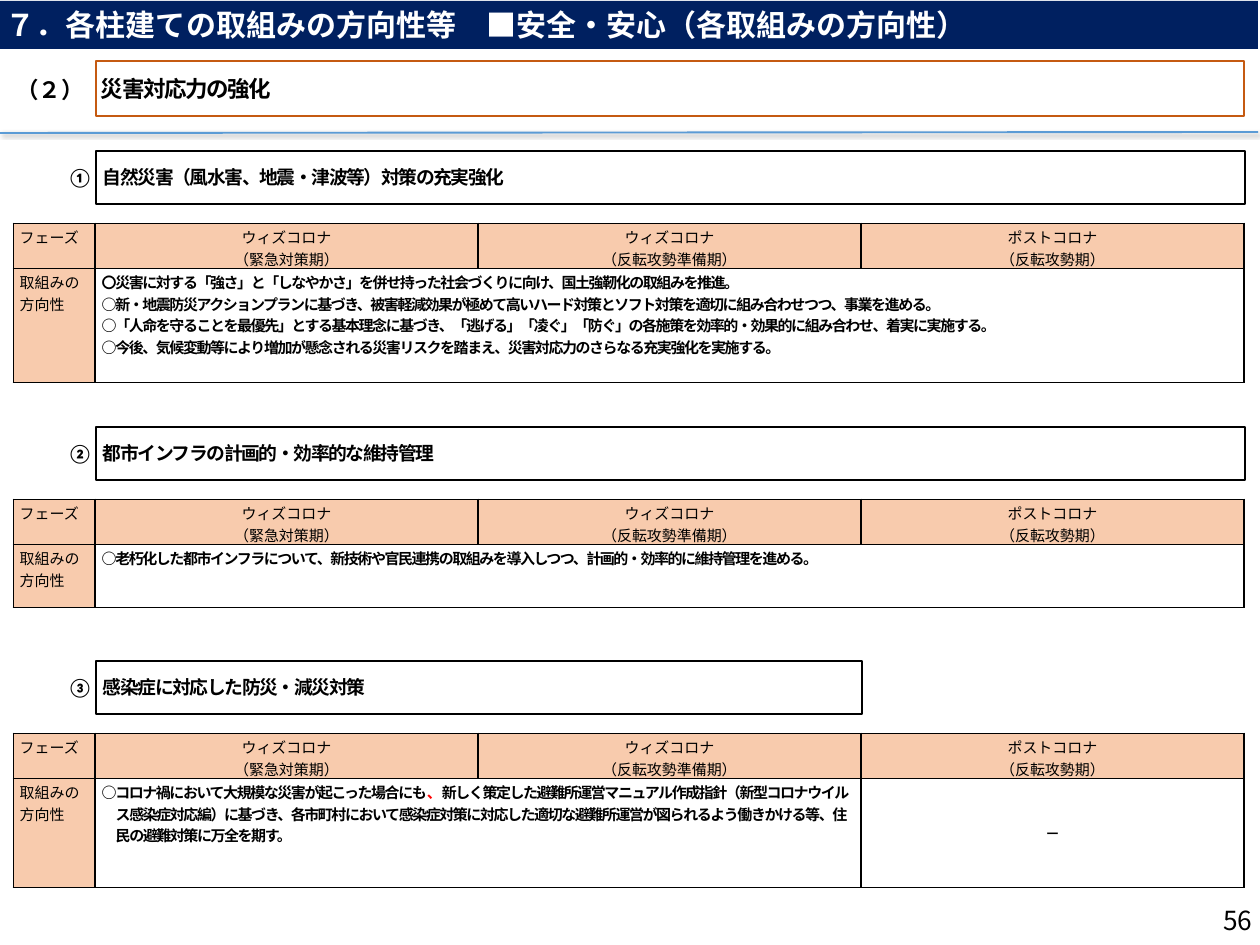
from lxml.etree import SubElement
from pptx import Presentation
from pptx.dml.color import RGBColor
from pptx.enum.shapes import MSO_CONNECTOR, MSO_SHAPE
from pptx.enum.text import MSO_ANCHOR as Anchor, PP_ALIGN as Align
from pptx.oxml.ns import qn
from pptx.util import Pt

PX = 914400 / 67.5
BLACK, WHITE, RED = "000000", "FFFFFF", "FF0000"
NAVY, ORANGE, BLUE, PEACH = "002060", "C55A11", "5B9BD5", "F8CBAD"

LEFT, TABLE_LEFT = 96, 13
LABEL_WIDTH, PHASE_WIDTH = 82, 383
TITLE_HEIGHT, TABLE_OFFSET, HEADER_HEIGHT = 53, 72, 45
TIGHT = -150  # letter spacing in hundredths of a point
HANGING = 14

HEADERS = [
    ["フェーズ"],
    ["ウィズコロナ", "（緊急対策期）"],
    ["ウィズコロナ", "（反転攻勢準備期）"],
    ["ポストコロナ", "（反転攻勢期）"],
]
ROW_LABEL = ["取組みの", "方向性"]

# mark, title, top, body height, number of phases covered, paragraphs
SECTIONS = [
    ("①", "自然災害（風水害、地震・津波等）対策の充実強化", 151, 114, 3, [
        "〇災害に対する「強さ」と「しなやかさ」を併せ持った社会づくりに向け、国土強靭化の取組みを推進。",
        "○新・地震防災アクションプランに基づき、被害軽減効果が極めて高いハード対策とソフト対策を適切に組み合わせつつ、事業を進める。",
        "○「人命を守ることを最優先」とする基本理念に基づき、「逃げる」「凌ぐ」「防ぐ」の各施策を効率的・効果的に組み合わせ、着実に実施する。",
        "○今後、気候変動等により増加が懸念される災害リスクを踏まえ、災害対応力のさらなる充実強化を実施する。",
    ]),
    ("②", "都市インフラの計画的・効率的な維持管理", 427, 63, 3, [
        "○老朽化した都市インフラについて、新技術や官民連携の取組みを導入しつつ、計画的・効率的に維持管理を進める。",
    ]),
    ("③", "感染症に対応した防災・減災対策", 661, 109, 2, [
        [("○コロナ禍において大規模な災害が起こった場合にも", BLACK),
         ("、", RED),
         ("新しく策定した避難所運営マニュアル作成指針（新型コロナウイルス感染症対応編）に基づき、"
          "各市町村において感染症対策に対応した適切な避難所運営が図られるよう働きかける等、"
          "住民の避難対策に万全を期す。", BLACK)],
    ]),
]


def px(length):
    return round(length * PX)


def rgb(color):
    return RGBColor.from_string(color)


def write(frame, paragraphs, size, font="Arial", color=BLACK, bold=False,
          align=Align.LEFT, spacing=0, hanging=0):
    """Fill a text frame; a paragraph is a string or a list of (text, color)."""
    frame.word_wrap = True
    for index, content in enumerate(paragraphs):
        para = frame.add_paragraph() if index else frame.paragraphs[0]
        para.alignment = align
        para.font.size = Pt(size)
        para.font.name = font
        para.font.bold = bold
        if hanging:
            properties = para._p.get_or_add_pPr()
            properties.set("marL", str(px(hanging)))
            properties.set("indent", str(-px(hanging)))
        spans = [(content, color)] if isinstance(content, str) else content
        for text, span_color in spans:
            span = para.add_run()
            span.text = text
            span.font.color.rgb = rgb(span_color)
            if spacing:
                span._r.get_or_add_rPr().set("spc", str(spacing))


def add_label(page, text, left, top, width, height, size, **style):
    box = page.shapes.add_textbox(px(left), px(top), px(width), px(height))
    box.text_frame.vertical_anchor = Anchor.MIDDLE
    write(box.text_frame, [text], size, **style)


def add_box(page, text, left, top, width, height, size, kind=MSO_SHAPE.RECTANGLE,
            fill=None, line=None, line_width=1.5, inset=7, **style):
    box = page.shapes.add_shape(kind, px(left), px(top), px(width), px(height))
    box.shadow.inherit = False
    if fill:
        box.fill.solid()
        box.fill.fore_color.rgb = rgb(fill)
    else:
        box.fill.background()
    if line:
        box.line.color.rgb = rgb(line)
        box.line.width = Pt(line_width)
    else:
        box.line.fill.background()
    frame = box.text_frame
    frame.vertical_anchor = Anchor.MIDDLE
    frame.margin_left = frame.margin_right = px(inset)
    write(frame, [text], size, bold=True, **style)
    return box


def add_divider(page):
    line = page.shapes.add_connector(MSO_CONNECTOR.STRAIGHT, 0, px(133), px(1258), px(132))
    line.line.color.rgb = rgb(BLUE)
    line.line.width = Pt(2)
    effects = SubElement(line._element.spPr, qn("a:effectLst"))
    shadow = SubElement(effects, qn("a:outerShdw"), blurRad=str(Pt(4)),
                        dist=str(Pt(3)), dir="2700000", rotWithShape="0")
    color = SubElement(shadow, qn("a:srgbClr"), val=BLACK)
    SubElement(color, qn("a:alpha"), val="40000")


def set_borders(cell, first_column):
    widths = {"lnL": 1 if first_column else 2.25, "lnR": 2.25, "lnT": 1, "lnB": 1}
    properties = cell._tc.get_or_add_tcPr()
    for side, width in widths.items():
        line = SubElement(properties, qn(f"a:{side}"), w=str(Pt(width)))
        fill = SubElement(line, qn("a:solidFill"))
        SubElement(fill, qn("a:srgbClr"), val=BLACK)


def add_phase_table(page, top, body_height, covered, paragraphs):
    widths = [LABEL_WIDTH] + [PHASE_WIDTH] * 3
    heights = [HEADER_HEIGHT, body_height]
    table = page.shapes.add_table(2, 4, px(TABLE_LEFT), px(top),
                                  px(sum(widths)), px(sum(heights))).table
    table.first_row = table.horz_banding = False
    for column, width in zip(table.columns, widths):
        column.width = px(width)
    for row, height in zip(table.rows, heights):
        row.height = px(height)

    for row in range(2):
        for column in range(4):
            cell = table.cell(row, column)
            set_borders(cell, column == 0)
            if row == 0 or column == 0:
                cell.fill.solid()
                cell.fill.fore_color.rgb = rgb(PEACH)
            else:
                cell.fill.background()

    for column, lines in enumerate(HEADERS):
        cell = table.cell(0, column)
        if column:
            cell.vertical_anchor = Anchor.MIDDLE
        write(cell.text_frame, lines, 16, align=Align.CENTER if column else Align.LEFT)

    write(table.cell(1, 0).text_frame, ROW_LABEL, 16)
    body = table.cell(1, 1)
    body.merge(table.cell(1, covered))
    write(body.text_frame, paragraphs, 16, bold=True, spacing=TIGHT, hanging=HANGING)
    if covered < 3:
        empty_phase = table.cell(1, 3)
        empty_phase.vertical_anchor = Anchor.MIDDLE
        write(empty_phase.text_frame, ["－"], 16, font="Calibri", bold=True,
              align=Align.CENTER)


def add_section(page, mark, title, top, body_height, covered, paragraphs):
    add_label(page, mark, 45, top, 70, TITLE_HEIGHT, 20, font="Calibri", bold=True,
              align=Align.CENTER)
    add_box(page, title, LEFT, top, covered * PHASE_WIDTH, TITLE_HEIGHT, 20,
            fill=WHITE, line=BLACK, spacing=TIGHT)
    add_phase_table(page, top + TABLE_OFFSET, body_height, covered, paragraphs)


def main():
    deck = Presentation()
    deck.slide_width, deck.slide_height = px(1260), px(945)
    page = deck.slides.add_slide(deck.slide_layouts[6])

    add_box(page, "７．各柱建ての取組みの方向性等　■安全・安心（各取組みの方向性）",
            -1, 1, 1259, 48, 32, fill=NAVY, color=WHITE)
    add_divider(page)
    heading = add_box(page, "災害対応力の強化", LEFT, 61, 1148, 55, 24,
                      kind=MSO_SHAPE.PENTAGON, line=ORANGE, line_width=3, inset=5,
                      spacing=TIGHT)
    heading.adjustments[0] = 0
    add_label(page, "（２）", -1, 61, 102, 56, 24, font="Calibri", bold=True,
              align=Align.CENTER)
    for section in SECTIONS:
        add_section(page, *section)
    add_label(page, "56", 1195, 894, 64, 51, 28, font="Noto Sans CJK JP",
              align=Align.RIGHT)

    deck.save("out.pptx")


if __name__ == "__main__":
    main()
